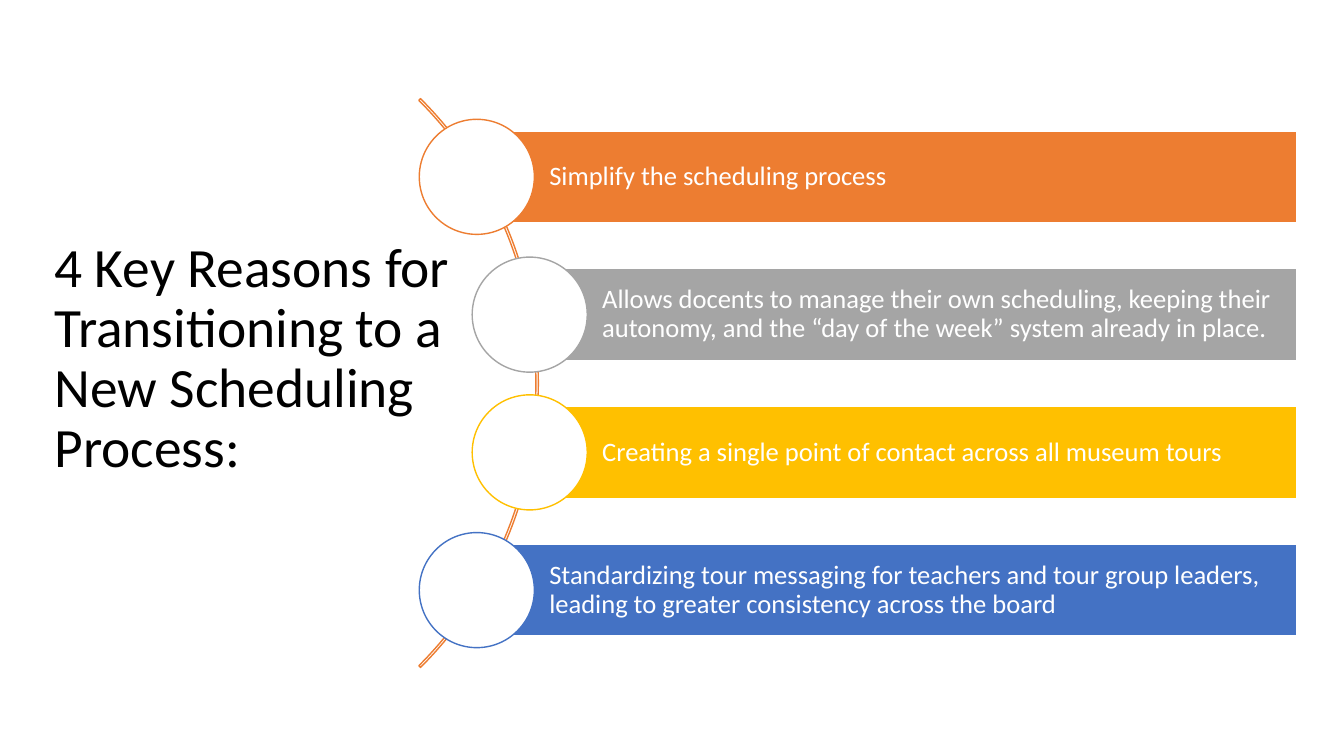
"""Build a slide listing four reasons for a new scheduling process along an arc."""
import pptx
import pptx.dml.color
import pptx.enum.shapes
import pptx.enum.text
import pptx.util

Pt = pptx.util.Pt
SHAPES = pptx.enum.shapes.MSO_SHAPE


def paint(part, line, fill=None):
    part.shadow.inherit = False
    part.line.color.rgb = pptx.dml.color.RGBColor.from_string(line)
    part.line.width = Pt(1)
    if fill:
        part.fill.solid()
        part.fill.fore_color.rgb = pptx.dml.color.RGBColor.from_string(fill)
    else:
        part.fill.background()


def write(part, text, size, color, left=7.2, inset=3.6):
    frame = part.text_frame
    frame.text = text
    frame.word_wrap = True
    frame.auto_size = pptx.enum.text.MSO_AUTO_SIZE.NONE
    frame.vertical_anchor = pptx.enum.text.MSO_ANCHOR.MIDDLE
    frame.margin_left = Pt(left)
    frame.margin_top = frame.margin_bottom = Pt(3.6)
    frame.margin_right = Pt(inset)
    paragraph = frame.paragraphs[0]
    paragraph.alignment = pptx.enum.text.PP_ALIGN.LEFT
    paragraph.line_spacing = 0.9
    font = paragraph.runs[0].font
    font.name = "Calibri"
    font.size = Pt(size)
    font.color.rgb = pptx.dml.color.RGBColor.from_string(color)


deck = pptx.Presentation()
deck.slide_width = Pt(960)
deck.slide_height = Pt(540)
slide = deck.slides.add_slide(deck.slide_layouts[5])

heading = slide.shapes.title
heading.left, heading.top = Pt(31.7), Pt(150.5)
heading.width, heading.height = Pt(309), Pt(212.4)
write(heading, "4 Key Reasons for Transitioning to a New Scheduling Process:",
      size=39.6, color="000000", inset=7.2)

arc = slide.shapes.add_shape(
    SHAPES.BLOCK_ARC, Pt(-190.1), Pt(-13.7), Pt(574.6), Pt(574.6))
arc.adjustments[0] = 189
arc.adjustments[1] = 27
arc.adjustments[2] = 0.003
paint(arc, line="ED7D31")

OUTER, INNER, RIGHT = 340.6, 378.4, 926.4
TOP, PITCH, BAR_HEIGHT, DIAMETER = 93.6, 98.4, 65.5, 82.2
reasons = [
    ("Simplify the scheduling process", "ED7D31", OUTER),
    ("Allows docents to manage their own scheduling, keeping their autonomy, "
     "and the “day of the week” system already in place.", "A5A5A5", INNER),
    ("Creating a single point of contact across all museum tours",
     "FFC000", INNER),
    ("Standardizing tour messaging for teachers and tour group leaders, "
     "leading to greater consistency across the board", "4472C4", OUTER),
]
for row, (reason, accent, left) in enumerate(reasons):
    top = TOP + row * PITCH
    bar = slide.shapes.add_shape(
        SHAPES.RECTANGLE, Pt(left), Pt(top), Pt(RIGHT - left), Pt(BAR_HEIGHT))
    paint(bar, line="FFFFFF", fill=accent)
    write(bar, reason, size=19, color="FFFFFF", left=51.8)
    circle = slide.shapes.add_shape(
        SHAPES.OVAL, Pt(left - DIAMETER / 2),
        Pt(top + (BAR_HEIGHT - DIAMETER) / 2), Pt(DIAMETER), Pt(DIAMETER))
    paint(circle, line=accent, fill="FFFFFF")

deck.save("out.pptx")
